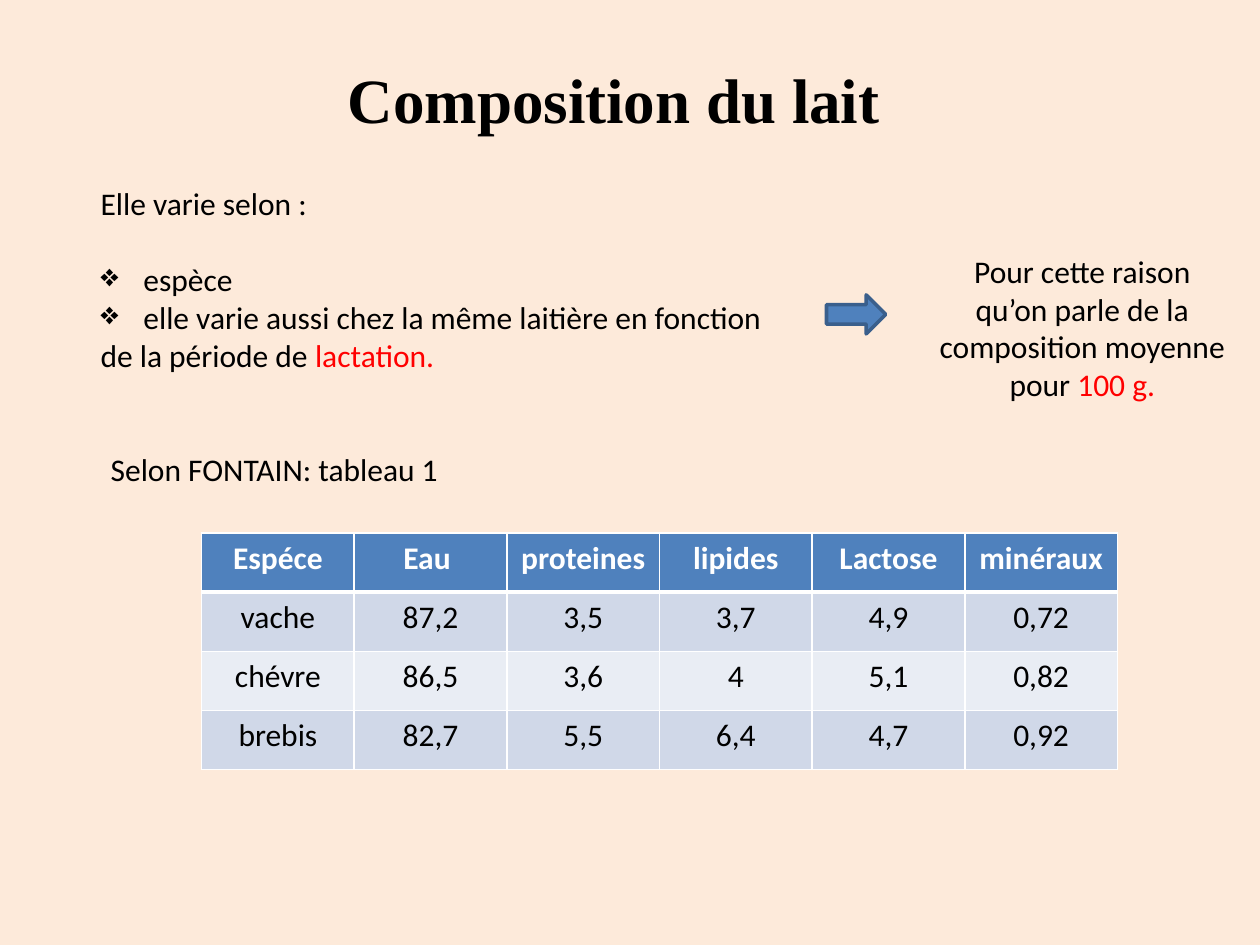
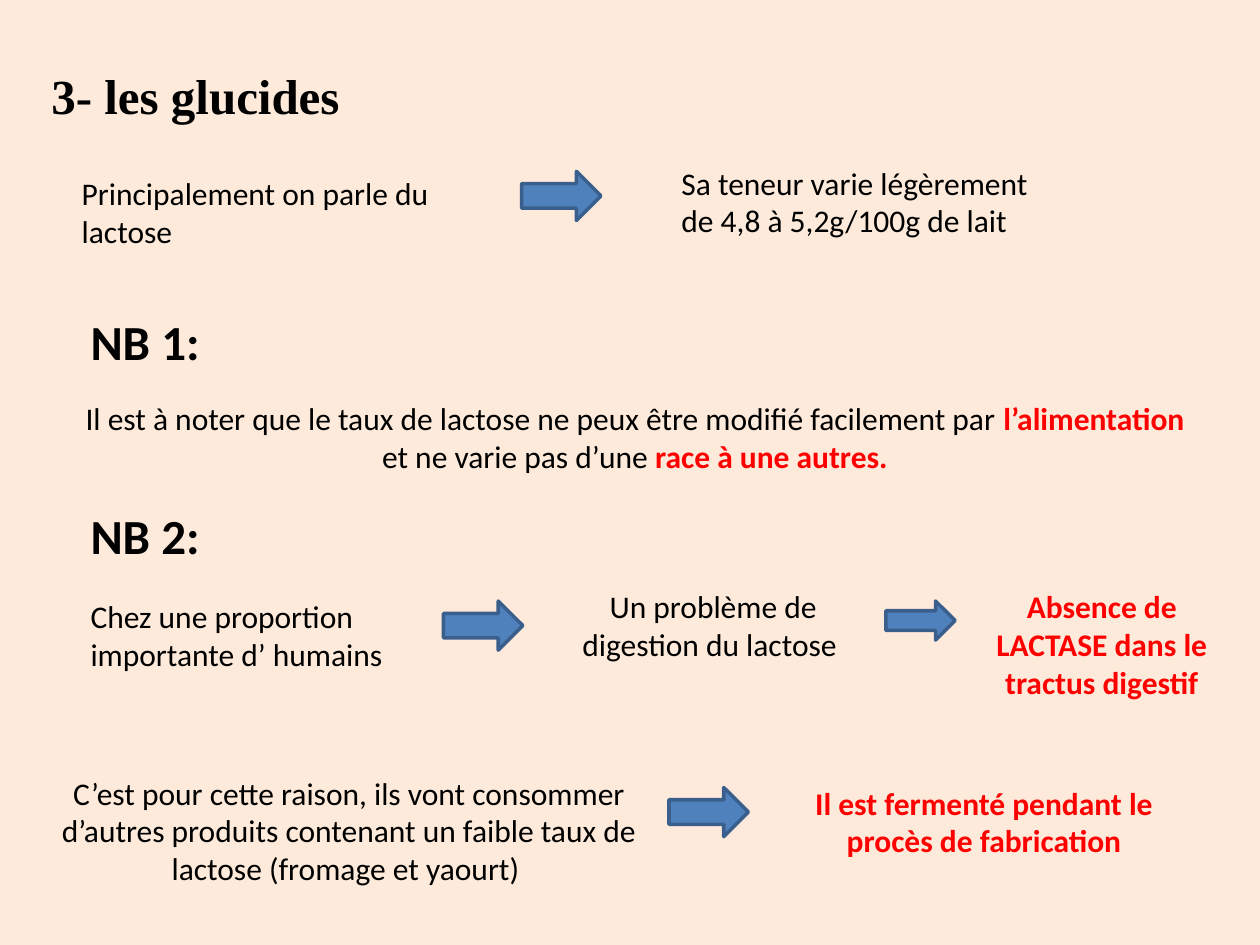
from lxml.etree import SubElement
from pptx import Presentation
from pptx.dml.color import RGBColor
from pptx.enum.shapes import MSO_SHAPE as Shape
from pptx.enum.text import MSO_AUTO_SIZE as AutoSize, PP_ALIGN as Align
from pptx.oxml.ns import qn
from pptx.util import Inches, Pt

SLIDE_W, SLIDE_H = 10, 7.5
COLUMNS, ROWS = 100, 75
CREAM, BLUE, NAVY = "FDEADA", "4F81BD", "3A5F8C"
BLACK, RED, WHITE = "000000", "FF0000", "FFFFFF"
BANDS = "D0D8E8", "E9EDF4"

STYLES = {
    "title": (BLACK, {"name": "Times New Roman", "size": Pt(36), "bold": True}),
    "section": (BLACK, {"name": "Times New Roman", "size": Pt(28), "bold": True}),
    "note": (BLACK, {"name": "Calibri", "size": Pt(28), "bold": True}),
    "body": (BLACK, {"name": "Calibri", "size": Pt(18), "bold": False}),
    "red": (RED, {"name": "Calibri", "size": Pt(18), "bold": False}),
    "alert": (RED, {"name": "Calibri", "size": Pt(18), "bold": True}),
    "header": (WHITE, {"name": "Calibri", "size": Pt(18), "bold": True}),
}
BULLET = "❖"
BULLET_TAB = 0.34
BLANK_LINE = Pt(22)

MILK_TABLE = [
    ("Espéce", "Eau ", "proteines", "lipides", "Lactose", "minéraux"),
    ("vache", "87,2", "3,5", "3,7", "4,9", "0,72"),
    ("chévre", "86,5", "3,6", "4", "5,1", "0,82"),
    ("brebis", "82,7", "5,5", "6,4", "4,7", "0,92"),
]
TABLE_AT = (16, 42.3, 72.7, 18.8)

# columns: left, top, width, lines, alignment, paragraphs of (style, text)
SLIDES = [
    {
        "texts": [
            (8.7, 4.3, 80, 1, "center", [[("title", "Composition du lait")]]),
            (7, 14.1, 57, 5, "left", [
                [("body", "Elle varie selon :")],
                [("body", BULLET + "espèce")],
                [("body", BULLET + "elle varie aussi chez la même laitière en fonction "
                  "de la période de "), ("red", "lactation.")],
            ]),
            (73.4, 19.5, 25, 4, "center", [
                [("body", "Pour cette raison qu’on parle de la composition moyenne pour "),
                 ("red", "100 g.")],
            ]),
            (7.8, 35.2, 46.1, 1, "left", [[("body", "Selon FONTAIN: tableau 1")]]),
        ],
        "arrows": [(65.6, 23.4, 4.7, 3.1)],
        "table": MILK_TABLE,
    },
    {
        "texts": [
            (3.1, 4.7, 85.5, 1, "left", [[("section", "3- les glucides")]]),
            (5.5, 13.3, 35.2, 2, "left", [[("body", "Principalement on parle du lactose")]]),
            (53.1, 12.5, 30.5, 2, "left", [
                [("body", "Sa teneur varie légèrement de 4,8 à 5,2g/100g de lait")]]),
            (6.2, 24.2, 24.2, 1, "left", [[("note", "NB 1:")]]),
            (5.5, 31.2, 89.8, 2, "center", [
                [("body", "Il est à noter que le taux de lactose ne peux être modifié "
                  "facilement par "), ("alert", "l’alimentation "),
                 ("body", "et ne varie pas d’une "), ("alert", "race à une autres.")],
            ]),
            (6.2, 39.6, 24.2, 1, "left", [[("note", "NB 2:")]]),
            (6.2, 46.9, 32.8, 2, "left", [
                [("body", "Chez une proportion importante d’ humains")]]),
            (44.5, 46.1, 24.2, 2, "center", [
                [("body", "Un problème de digestion du lactose ")]]),
            (77.3, 46.1, 20.3, 3, "center", [
                [("alert", "Absence de LACTASE dans le tractus digestif")]]),
            (2.3, 60.9, 50.8, 3, "center", [
                [("body", "C’est pour cette raison, ils vont consommer d’autres produits "
                  "contenant un faible taux de lactose (fromage et yaourt) ")]]),
            (60.9, 61.7, 34.4, 2, "center", [
                [("alert", "Il est fermenté pendant le procès de fabrication")]]),
        ],
        "arrows": [(41.4, 13.6, 6.3, 3.9), (35.2, 47.7, 6.3, 3.9),
                   (70.3, 47.7, 5.5, 3.1), (53.1, 62.5, 6.3, 3.9)],
    },
]


def place(left, top, width, height):
    x, y = SLIDE_W / COLUMNS, SLIDE_H / ROWS
    return [Inches(v) for v in (left * x, top * y, width * x, height * y)]


def paint(target, colour):
    if hasattr(target, "solid"):
        target.solid()
        target = target.fore_color
    target.rgb = RGBColor.from_string(colour)


def write(paragraph, style, text):
    run = paragraph.add_run()
    run.text = text
    colour, values = STYLES[style]
    for key, value in values.items():
        setattr(run.font, key, value)
    paint(run.font.color, colour)


def add_bullet(paragraph):
    properties = paragraph._p.get_or_add_pPr()
    properties.set("marL", "0")
    properties.set("indent", "0")
    SubElement(properties, qn("a:buChar"), char=BULLET)
    tabs = SubElement(properties, qn("a:tabLst"))
    SubElement(tabs, qn("a:tab"), pos=str(Inches(BULLET_TAB)), algn="l")


def add_text(slide, left, top, width, lines, align, paragraphs):
    size = STYLES[paragraphs[0][0][0]][1]["size"].inches
    height = (0.1 + lines * size * 1.2) * ROWS / SLIDE_H
    frame = slide.shapes.add_textbox(*place(left, top, width, height)).text_frame
    frame.word_wrap = True
    frame.auto_size = AutoSize.SHAPE_TO_FIT_TEXT
    listed = False
    for index, runs in enumerate(paragraphs):
        paragraph = frame.paragraphs[0] if index == 0 else frame.add_paragraph()
        paragraph.alignment = getattr(Align, align.upper())
        if runs[0][1].startswith(BULLET):
            if not listed:
                paragraph.space_before = BLANK_LINE
            listed = True
            add_bullet(paragraph)
        for style, text in runs:
            write(paragraph, style, text.replace(BULLET, "\t"))


def add_arrow(slide, *box):
    arrow = slide.shapes.add_shape(Shape.RIGHT_ARROW, *place(*box))
    arrow.shadow.inherit = False
    paint(arrow.fill, BLUE)
    paint(arrow.line.fill, NAVY)
    arrow.line.width = Pt(2)


def add_borders(cell, row):
    widths = {"lnL": 1, "lnR": 1, "lnT": 3 if row == 1 else 1, "lnB": 3 if row == 0 else 1}
    for side, width in widths.items():
        line = SubElement(cell._tc.get_or_add_tcPr(), qn(f"a:{side}"), w=str(Pt(width)))
        SubElement(SubElement(line, qn("a:solidFill")), qn("a:srgbClr"), val=WHITE)


def add_milk_table(slide, content):
    box = place(*TABLE_AT)
    table = slide.shapes.add_table(len(content), len(content[0]), *box).table
    for row, values in enumerate(content):
        for column, value in enumerate(values):
            cell = table.cell(row, column)
            add_borders(cell, row)
            paint(cell.fill, BANDS[(row - 1) % 2] if row else BLUE)
            paragraph = cell.text_frame.paragraphs[0]
            paragraph.alignment = Align.CENTER
            write(paragraph, "body" if row else "header", value)


def main():
    deck = Presentation()
    deck.slide_width, deck.slide_height = Inches(SLIDE_W), Inches(SLIDE_H)
    for content in SLIDES:
        slide = deck.slides.add_slide(deck.slide_layouts[6])
        paint(slide.background.fill, CREAM)
        for text in content["texts"]:
            add_text(slide, *text)
        for arrow in content["arrows"]:
            add_arrow(slide, *arrow)
        if "table" in content:
            add_milk_table(slide, content["table"])
    deck.save("out.pptx")


if __name__ == "__main__":
    main()
